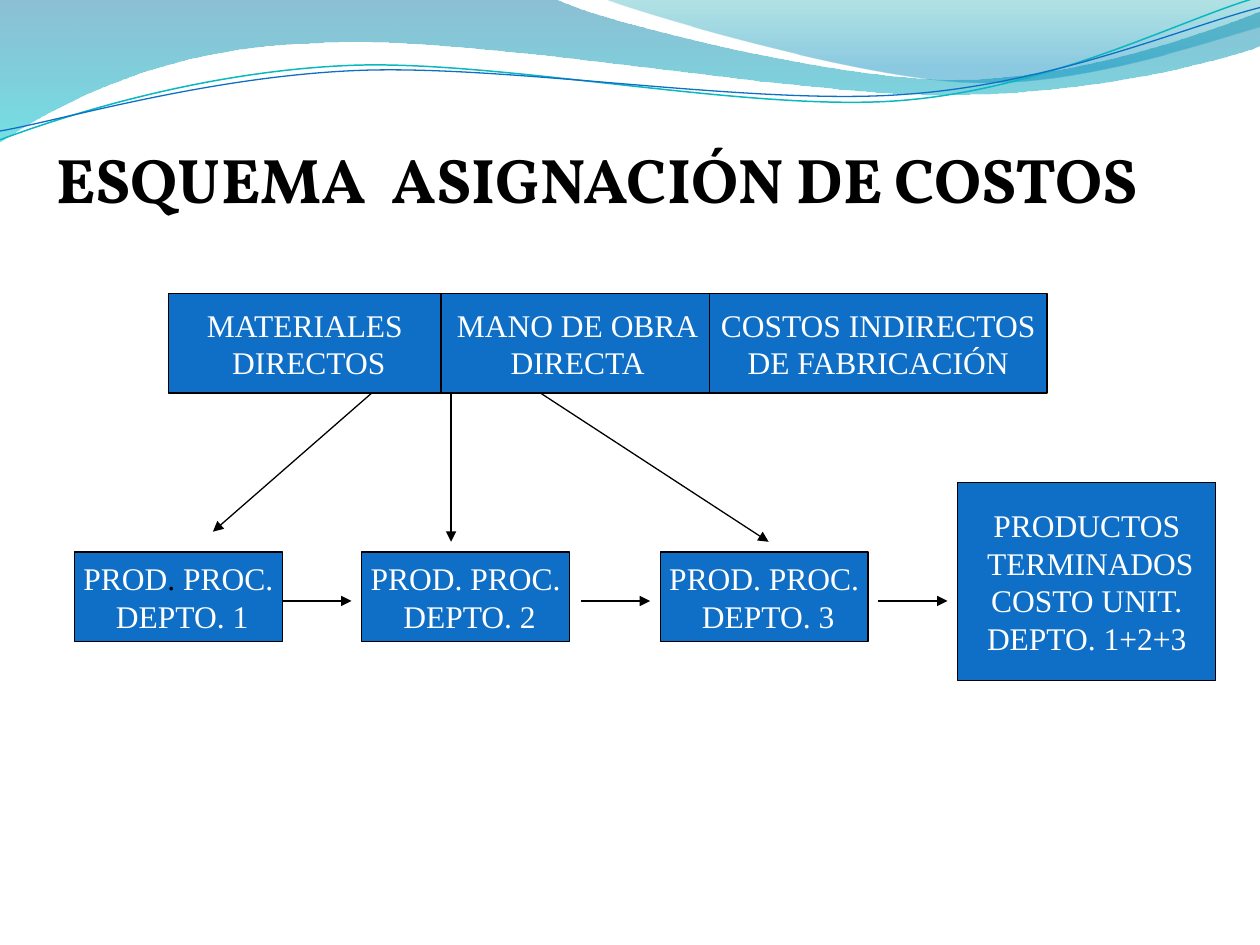
from lxml import etree
from pptx import Presentation
from pptx import util as u
from pptx.dml.color import RGBColor
from pptx.enum import shapes, text
from pptx.oxml.ns import qn

BLUE, BLACK, WHITE = "0F6FC6", "000000", "FFFFFF"
SERIF = "Times New Roman"
TITLE = "ESQUEMA  ASIGNACIÓN DE COSTOS"

BANDS = [
    ([(0, 0), (4.4, -0.01), (4.76, 0.17, 6.64, 0.63, 7.58, 0.63),
      (8.53, 0.63, 9.58, 0.26, 10, 0.09), (10.01, 0.36),
      (9.83, 0.44, 8.7, 0.76, 7.46, 0.75), (6.22, 0.75, 3.82, 0.28, 2.57, 0.34),
      (1.29, 0.36, 0.46, 0.83, -0.01, 1.13)],
     [(0, "0074A1", 45), (1, "00C6CF", 55)]),
    ([(4.79, -0.01), (5.09, 0.11, 6.82, 0.62, 7.69, 0.65),
      (8.56, 0.69, 9.61, 0.32, 10, 0.21), (10, 0)],
     [(0, "00A1A9", 30), (0.8, "008BBF", 45)]),
]
CURVES = [
    ([(0, 1.11), (0.48, 0.93, 1.58, 0.57, 2.77, 0.52),
      (3.95, 0.47, 5.93, 0.89, 7.13, 0.8), (8.33, 0.71, 9.38, 0.15, 9.98, -0.02)],
     "0AB8BF", 0.85),
    ([(0, 1.04), (0.47, 0.96, 1.64, 0.61, 2.83, 0.56),
      (4.03, 0.51, 5.97, 0.84, 7.17, 0.75), (8.36, 0.67, 9.41, 0.21, 10, 0.06)],
     BLUE, 0.75),
]

COST_TOP, COST_HEIGHT = 2.33, 0.79
COSTS = [
    (1.34, 2.16, ["MATERIALES", " DIRECTOS"]),
    (3.5, 2.17, ["MANO DE OBRA", "DIRECTA"]),
    (5.63, 2.68, ["COSTOS INDIRECTOS", "DE FABRICACIÓN"]),
]
STAGE_TOP, STAGE_WIDTH, STAGE_HEIGHT = 4.38, 1.65, 0.71
STAGES = [
    (0.59, [[("PROD", WHITE), (". ", BLACK), ("PROC.", WHITE)], " DEPTO. 1"]),
    (2.87, ["PROD. PROC.", " DEPTO. 2"]),
    (5.24, ["PROD. PROC.", " DEPTO. 3"]),
]
FINISHED = (7.6, 3.83, 2.05, 1.57)
FINISHED_LINES = ["PRODUCTOS", " TERMINADOS", " COSTO UNIT. ", "DEPTO. 1+2+3"]
COST_ARROWS = [(2.95, 1.69, 4.22), (4.29, 6.1, 4.3), (3.58, 3.58, 4.3)]
FLOW_Y, FLOW_LENGTH, FLOW_GAP = 4.77, 0.55, 0.08


def color(value):
    return RGBColor.from_string(value)


def inches(*values):
    return [u.Inches(value) for value in values]


def add_outline(page, steps, close):
    anchors = [tuple(inches(*step[-2:])) for step in steps]
    builder = page.shapes.build_freeform(*anchors[0], scale=1.0)
    builder.add_line_segments(anchors[1:], close=close)
    outline = builder.convert_to_shape()
    outline.shadow.inherit = False
    segments = list(outline._element.spPr.iter(qn("a:lnTo")))
    for segment, step in zip(segments, steps[1:]):
        if len(step) == 6:
            bend(segment, inches(*step[:4]), outline.left, outline.top)
    return outline


def bend(segment, controls, left, top):
    segment.tag = qn("a:cubicBezTo")
    for i in (0, 2):
        point = etree.Element(qn("a:pt"), x=str(controls[i] - left),
                              y=str(controls[i + 1] - top))
        segment.insert(i // 2, point)


def add_band(page, steps, stops):
    band = add_outline(page, steps, True)
    band.line.fill.background()
    band.fill.gradient()
    band.fill.gradient_angle = 270
    for stop, (position, shade, _) in zip(band.fill.gradient_stops, stops):
        stop.position = position
        stop.color.rgb = color(shade)
    shades = band._element.spPr.find(qn("a:gradFill")).iter(qn("a:srgbClr"))
    for shade, (_, _, opacity) in zip(shades, stops):
        etree.SubElement(shade, qn("a:alpha"), val=str(opacity * 1000))


def add_curve(page, steps, shade, width):
    curve = add_outline(page, steps, False)
    curve.fill.background()
    curve.line.color.rgb = color(shade)
    curve.line.width = u.Pt(width)


def add_span(para, words, size, font, shade, bold=False):
    span = para.add_run()
    span.text = words
    span.font.size, span.font.name, span.font.bold = u.Pt(size), font, bold
    span.font.color.rgb = color(shade)


def add_box(page, place, lines):
    box = page.shapes.add_shape(shapes.MSO_SHAPE.RECTANGLE, *inches(*place))
    box.shadow.inherit = False
    box.fill.solid()
    box.fill.fore_color.rgb = color(BLUE)
    box.line.color.rgb = color(BLACK)
    box.line.width = u.Pt(0.75)
    frame = box.text_frame
    frame.word_wrap = False
    frame.vertical_anchor = text.MSO_ANCHOR.MIDDLE
    for i, line in enumerate(lines):
        para = frame.add_paragraph() if i else frame.paragraphs[0]
        para.alignment = text.PP_ALIGN.CENTER
        for words, shade in [(line, WHITE)] if isinstance(line, str) else line:
            add_span(para, words, 18, SERIF, shade)


def add_arrow(page, *ends):
    arrow = page.shapes.add_connector(shapes.MSO_CONNECTOR.STRAIGHT, *inches(*ends))
    arrow.line.color.rgb = color(BLACK)
    arrow.line.width = u.Pt(0.75)
    line = arrow._element.spPr.find(qn("a:ln"))
    etree.SubElement(line, qn("a:tailEnd"), type="triangle")
    etree.SubElement(arrow._element.spPr, qn("a:effectLst"))


def add_title(page):
    box = page.shapes.add_textbox(*inches(0.35, 1.07, 9.23, 5.8))
    box.text_frame.word_wrap = True
    para = box.text_frame.paragraphs[0]
    para.alignment = text.PP_ALIGN.JUSTIFY
    para.space_before = u.Pt(7.2)
    indent = u.Inches(0.3)
    layout = para._p.get_or_add_pPr()
    layout.set("marL", str(indent))
    layout.set("indent", str(-indent))
    add_span(para, TITLE, 36, "Vollkorn", BLACK, True)


def main():
    deck = Presentation()
    deck.slide_width, deck.slide_height = inches(10, 7.5)
    page = deck.slides.add_slide(deck.slide_layouts[6])
    for band in BANDS:
        add_band(page, *band)
    for curve in CURVES:
        add_curve(page, *curve)
    add_title(page)
    for left, width, lines in COSTS:
        add_box(page, (left, COST_TOP, width, COST_HEIGHT), lines)
    for left, lines in STAGES:
        add_box(page, (left, STAGE_TOP, STAGE_WIDTH, STAGE_HEIGHT), lines)
    add_box(page, FINISHED, FINISHED_LINES)
    for start, end, bottom in COST_ARROWS:
        add_arrow(page, start, COST_TOP + COST_HEIGHT, end, bottom)
    for target in [left for left, _ in STAGES[1:]] + [FINISHED[0]]:
        tip = target - FLOW_GAP
        add_arrow(page, tip - FLOW_LENGTH, FLOW_Y, tip, FLOW_Y)
    deck.save("out.pptx")


if __name__ == "__main__":
    main()
